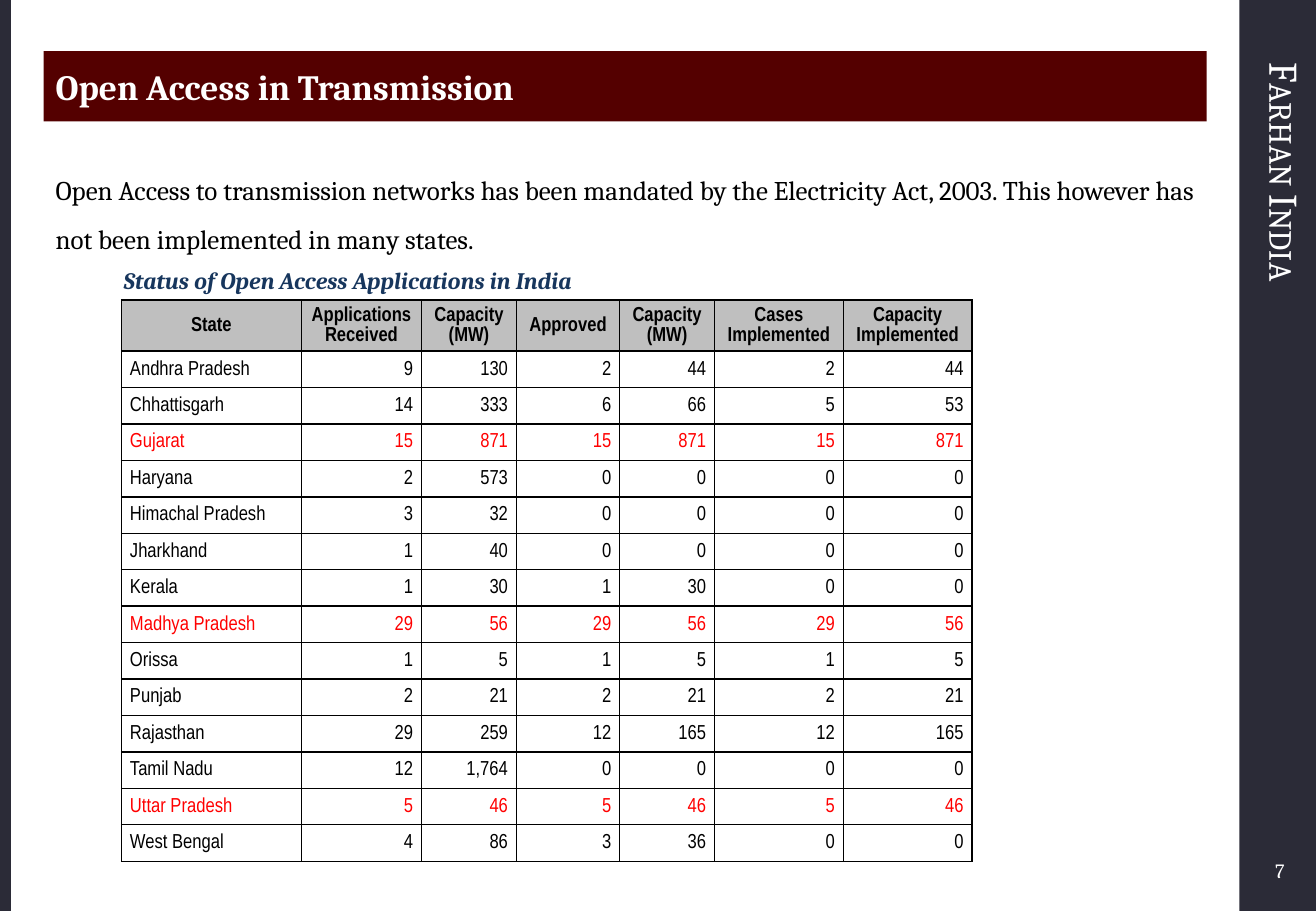
from dataclasses import dataclass

from lxml.etree import SubElement
from pptx import Presentation
from pptx.dml.color import RGBColor
from pptx.enum.shapes import MSO_SHAPE as Preset
from pptx.enum.text import MSO_ANCHOR as Anchor, PP_ALIGN as Align
from pptx.oxml.ns import qn
from pptx.util import Inches, Pt

COLUMNS, ROWS = 108.3, 75
CELL = Inches(0.1)


@dataclass(frozen=True)
class Theme:
    serif: str = "Cambria"
    narrow: str = "Arial Narrow"
    dark: str = "2B2B37"
    maroon: str = "540000"
    navy: str = "17365D"
    white: str = "FFFFFF"
    black: str = "000000"
    header: str = "BFBFBF"
    highlight: str = "FF0000"
    brand_size: int = 24
    title_size: int = 21
    body_size: int = 16
    caption_size: int = 14
    small_size: int = 12


class SlideBuilder:
    """Places elements on a slide; every box is (column, row, columns, rows)."""

    def __init__(self, slide, theme):
        self.slide = slide
        self.theme = theme

    def place(self, box):
        return [round(length * CELL) for length in box]

    def format(self, paragraph, size, color, font=None, bold=False, italic=False, align=Align.LEFT):
        paragraph.alignment = align
        for run in paragraph.runs:
            run.font.name = font or self.theme.serif
            run.font.size = Pt(size)
            run.font.bold = bold
            run.font.italic = italic
            run.font.color.rgb = RGBColor.from_string(color)

    def bar(self, box, color):
        shape = self.slide.shapes.add_shape(Preset.RECTANGLE, *self.place(box))
        shape.shadow.inherit = False
        shape.fill.solid()
        shape.fill.fore_color.rgb = RGBColor.from_string(color)
        shape.line.fill.background()
        return shape

    def title(self, box, text):
        frame = self.bar(box, self.theme.maroon).text_frame
        frame.text = text
        frame.word_wrap = True
        frame.vertical_anchor = Anchor.MIDDLE
        self.format(frame.paragraphs[0], self.theme.title_size, self.theme.white, bold=True)

    def text(self, box, text, size, color, anchor=Anchor.TOP, **style):
        frame = self.slide.shapes.add_textbox(*self.place(box)).text_frame
        frame.word_wrap = True
        frame.vertical_anchor = anchor
        frame.text = text
        self.format(frame.paragraphs[0], size, color, **style)
        return frame

    def side_label(self, box, text):
        """Small capitals running down the side bar."""
        frame = self.text(box, text, self.theme.brand_size, self.theme.white)
        frame._txBody.bodyPr.set("vert", "vert")
        frame.paragraphs[0].runs[0]._r.get_or_add_rPr().set("cap", "small")

    def border(self, cell):
        properties = cell._tc.get_or_add_tcPr()
        for side in ("lnL", "lnR", "lnT", "lnB"):
            line = SubElement(properties, qn(f"a:{side}"), w=str(Pt(1)))
            fill = SubElement(line, qn("a:solidFill"))
            SubElement(fill, qn("a:srgbClr"), val=self.theme.black)

    def cell(self, cell, text, color, bold, align, fill):
        cell.margin_left = cell.margin_right = Inches(0.07)
        cell.margin_top = cell.margin_bottom = 0
        cell.vertical_anchor = Anchor.MIDDLE
        self.border(cell)
        if fill:
            cell.fill.solid()
            cell.fill.fore_color.rgb = RGBColor.from_string(fill)
        else:
            cell.fill.background()
        paragraph = cell.text_frame.paragraphs[0]
        paragraph.text = text
        paragraph.line_spacing = 1.05
        self.format(paragraph, self.theme.small_size, color, self.theme.narrow, bold, align=align)

    def table(self, left, top, widths, row_height, header, records, highlighted):
        rows = [header, *records]
        box = (left, top, sum(widths), row_height * len(rows))
        table = self.slide.shapes.add_table(len(rows), len(header), *self.place(box)).table
        table.first_row = table.horz_banding = False
        for column, width in zip(table.columns, widths):
            column.width = round(width * CELL)
        for row_index, values in enumerate(rows):
            is_header = row_index == 0
            color = self.theme.highlight if values[0] in highlighted else self.theme.black
            for column_index, value in enumerate(values):
                align = Align.CENTER if is_header else Align.RIGHT if column_index else Align.LEFT
                self.cell(table.cell(row_index, column_index), value, color, is_header, align,
                          self.theme.header if is_header else None)


HEADER = ("State", "Applications\vReceived", "Capacity (MW)", "Approved", "Capacity (MW)",
          "Cases\vImplemented", "Capacity\vImplemented")
STATES = (
    ("Andhra Pradesh", "9", "130", "2", "44", "2", "44"),
    ("Chhattisgarh", "14", "333", "6", "66", "5", "53"),
    ("Gujarat", "15", "871", "15", "871", "15", "871"),
    ("Haryana", "2", "573", "0", "0", "0", "0"),
    ("Himachal Pradesh", "3", "32", "0", "0", "0", "0"),
    ("Jharkhand", "1", "40", "0", "0", "0", "0"),
    ("Kerala", "1", "30", "1", "30", "0", "0"),
    ("Madhya Pradesh", "29", "56", "29", "56", "29", "56"),
    ("Orissa", "1", "5", "1", "5", "1", "5"),
    ("Punjab", "2", "21", "2", "21", "2", "21"),
    ("Rajasthan", "29", "259", "12", "165", "12", "165"),
    ("Tamil Nadu", "12", "1,764", "0", "0", "0", "0"),
    ("Uttar Pradesh", "5", "46", "5", "46", "5", "46"),
    ("West Bengal", "4", "86", "3", "36", "0", "0"),
)
FULLY_IMPLEMENTED = {"Gujarat", "Madhya Pradesh", "Uttar Pradesh"}


def main():
    presentation = Presentation()
    presentation.slide_width = round(COLUMNS * CELL)
    presentation.slide_height = ROWS * CELL
    theme = Theme()
    builder = SlideBuilder(presentation.slides.add_slide(presentation.slide_layouts[6]), theme)

    side_left, side_width = 102, COLUMNS - 102
    builder.bar((side_left, 0, side_width, ROWS), theme.dark)
    builder.bar((0, 0, 0.9, ROWS), theme.dark)
    builder.side_label((side_left, 4.2, side_width, 64.2), "Farhan India")

    builder.title((3.6, 4.2, 95.7, 5.8), "Open Access in Transmission")
    body = builder.text(
        (3.6, 12.5, 95.7, 55.8),
        "Open Access to transmission networks has been mandated by the Electricity Act, 2003. "
        "This however has not been implemented in many states.",
        theme.body_size, theme.black)
    body.paragraphs[0].line_spacing = 1.5
    builder.text((95, 70, 11.7, 3.3), "7", theme.small_size, theme.white,
                 anchor=Anchor.MIDDLE, align=Align.RIGHT)

    builder.table(10, 24.7, (14.8, 9.9, 7.8, 8.5, 7.8, 10.6, 10.6), 3,
                  HEADER, STATES, FULLY_IMPLEMENTED)
    builder.text((9.2, 21.4, 71.7, 3.4), "Status of Open Access Applications in India",
                 theme.caption_size, theme.navy, bold=True, italic=True)
    presentation.save("out.pptx")


if __name__ == "__main__":
    main()
